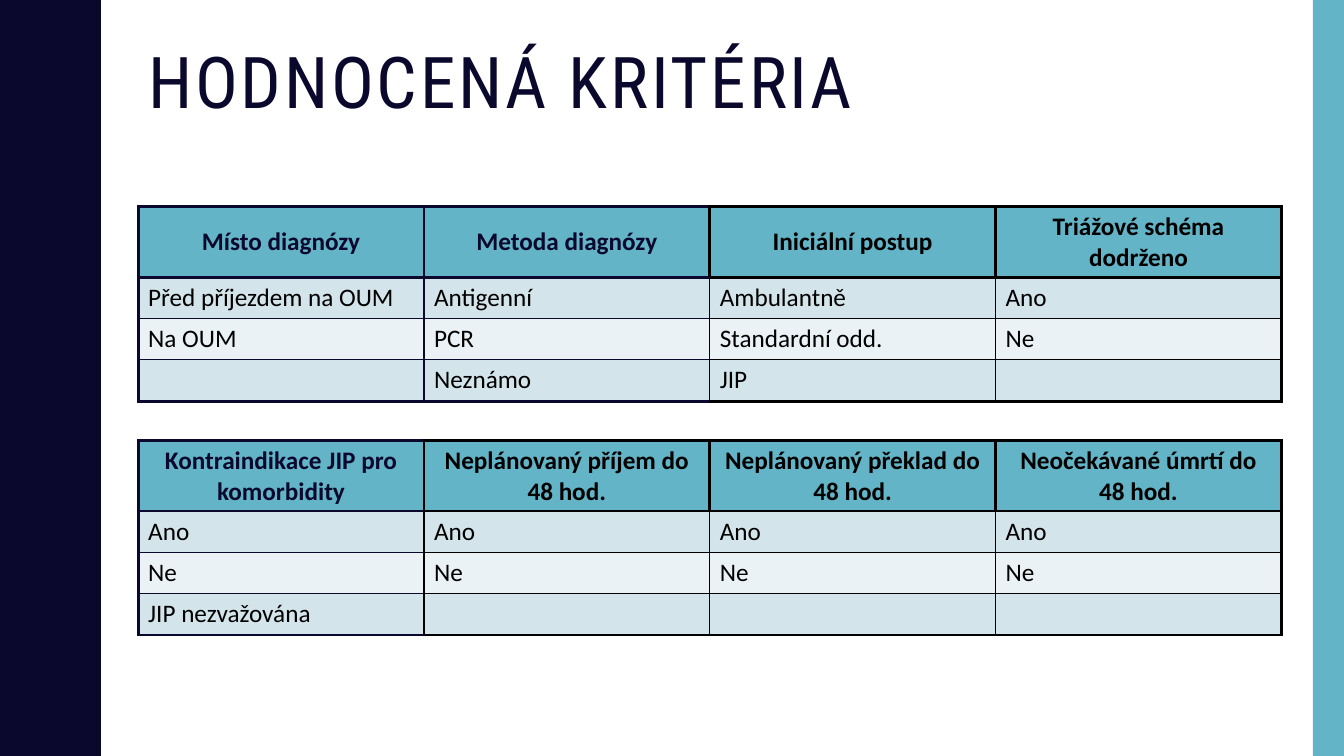
from lxml.etree import SubElement
from pptx import Presentation
from pptx.dml.color import RGBColor
from pptx.enum.shapes import MSO_SHAPE as Shape
from pptx.enum.text import MSO_ANCHOR as Anchor, PP_ALIGN as Align
from pptx.oxml.ns import qn
from pptx.util import Inches, Pt

COLORS = {
    "navy": "0B082E",
    "teal": "62B4C6",
    "black": "000000",
    "band": "D3E5EA",
    "pale": "EAF2F5",
}
WIDTH, HEIGHT = 13.33, 7.5
LEFT = 1.37
THICK, THIN = 2.25, 1

# One rising half of the wave: x and y within a period
WAVE_PERIOD = 1.5
RISE = [(0.78, 0), (0.78, 0.07), (0.79, 0.14), (0.8, 0.2), (0.81, 0.25),
        (0.83, 0.29), (0.85, 0.33), (0.87, 0.38), (0.89, 0.42), (0.91, 0.46),
        (0.93, 0.5), (0.95, 0.55), (0.96, 0.61), (0.97, 0.68), (0.97, 0.75)]

# Rows of each table: headings first
DIAGNOSIS = [
    ["Místo diagnózy", "Metoda diagnózy", "Iniciální postup", "Triážové schéma dodrženo"],
    ["Před příjezdem na OUM", "Antigenní", "Ambulantně", "Ano"],
    ["Na OUM", "PCR", "Standardní odd.", "Ne"],
    ["", "Neznámo", "JIP", ""],
]
OUTCOMES = [
    ["Kontraindikace JIP pro komorbidity", "Neplánovaný příjem do 48 hod.",
     "Neplánovaný překlad do 48 hod.", "Neočekávané úmrtí do 48 hod."],
    ["Ano"] * 4,
    ["Ne"] * 4,
    ["JIP nezvažována", "", "", ""],
]


def rgb(name):
    return RGBColor.from_string(COLORS[name])


def write(frame, text, *, font="Calibri", size=18, color="black", bold=False,
          align=Align.LEFT, line_spacing=None, tracking=None):
    """Put one formatted paragraph into a text frame."""
    frame.word_wrap = True
    para = frame.paragraphs[0]
    para.alignment = align
    if line_spacing:
        para.line_spacing = line_spacing
    if not text:
        para.font.size = Pt(size)
        return
    span = para.add_run()
    span.text = text
    span.font.name = font
    span.font.size = Pt(size)
    span.font.bold = bold
    span.font.color.rgb = rgb(color)
    if tracking:
        span.font._element.set("spc", str(tracking * 100))


def set_border(cell, side, color, width):
    line = SubElement(cell._tc.get_or_add_tcPr(), qn(f"a:ln{side}"), w=str(Pt(width)))
    fill = SubElement(line, qn("a:solidFill"))
    SubElement(fill, qn("a:srgbClr"), val=COLORS[color])


class SlideBuilder:
    def __init__(self, page):
        self.page = page

    def finish(self, shape, color):
        shape.shadow.inherit = False
        shape.fill.solid()
        shape.fill.fore_color.rgb = rgb(color)
        shape.line.fill.background()

    def rectangle(self, left, top, width, height, color):
        box = self.page.shapes.add_shape(
            Shape.RECTANGLE, Inches(left), Inches(top), Inches(width), Inches(height))
        self.finish(box, color)

    def wave(self, color):
        fall = [(x, WAVE_PERIOD - y) for x, y in reversed(RISE[:-1])]
        edge = [(x, start * WAVE_PERIOD + y)
                for start in range(round(HEIGHT / WAVE_PERIOD))
                for x, y in RISE + fall]
        outline = self.page.shapes.build_freeform(0, 0, scale=Inches(1))
        outline.add_line_segments(edge + [(0, HEIGHT)], close=True)
        self.finish(outline.convert_to_shape(), color)

    def title(self, text, left, top, width, height):
        box = self.page.shapes.add_textbox(
            Inches(left), Inches(top), Inches(width), Inches(height))
        write(box.text_frame, text, font="Roboto Condensed", size=51, color="navy",
              line_spacing=0.9, tracking=2)

    def table(self, rows, top, navy_columns):
        """Draw a table whose first navy_columns columns have navy headings and rules."""
        heights = [0.7] + [0.41] * (len(rows) - 1)
        count = len(rows[0])
        column_width = 2.835
        table = self.page.shapes.add_table(
            len(rows), count, Inches(LEFT), Inches(top),
            Inches(column_width * count), Inches(sum(heights))).table
        table.horz_banding = False
        for column in table.columns:
            column.width = Inches(column_width)
        for r, texts in enumerate(rows):
            table.rows[r].height = Inches(heights[r])
            for c, text in enumerate(texts):
                cell = table.cell(r, c)
                header = r == 0
                color = "navy" if c < navy_columns else "black"

                # Borders: thick around the table and the headings
                right_color = "navy" if c + 1 < navy_columns else "black"
                last_row, last_column = r == len(rows) - 1, c == count - 1
                for side, line_color, thick in (
                        ("L", color, header or c == 0),
                        ("R", right_color, header or last_column),
                        ("T", color, r <= 1),
                        ("B", color, header or last_row)):
                    set_border(cell, side, line_color, THICK if thick else THIN)

                # Fill and text
                cell.fill.solid()
                cell.fill.fore_color.rgb = rgb(
                    "teal" if header else "band" if r % 2 else "pale")
                if header:
                    cell.vertical_anchor = Anchor.MIDDLE
                    write(cell.text_frame, text, color=color, bold=True, align=Align.CENTER)
                else:
                    write(cell.text_frame, text)


def main():
    deck = Presentation()
    deck.slide_width, deck.slide_height = Inches(WIDTH), Inches(HEIGHT)
    builder = SlideBuilder(deck.slides.add_slide(deck.slide_layouts[6]))

    # Side decoration
    builder.wave("navy")
    builder.rectangle(13.02, 0, 0.31, HEIGHT, "teal")

    # Title and criteria tables
    builder.title("HODNOCENÁ KRITÉRIA", LEFT, 0.42, 11.13, 1.63)
    builder.table(DIAGNOSIS, 2.05, navy_columns=2)
    builder.table(OUTCOMES, 4.37, navy_columns=1)

    deck.save("out.pptx")


if __name__ == "__main__":
    main()
